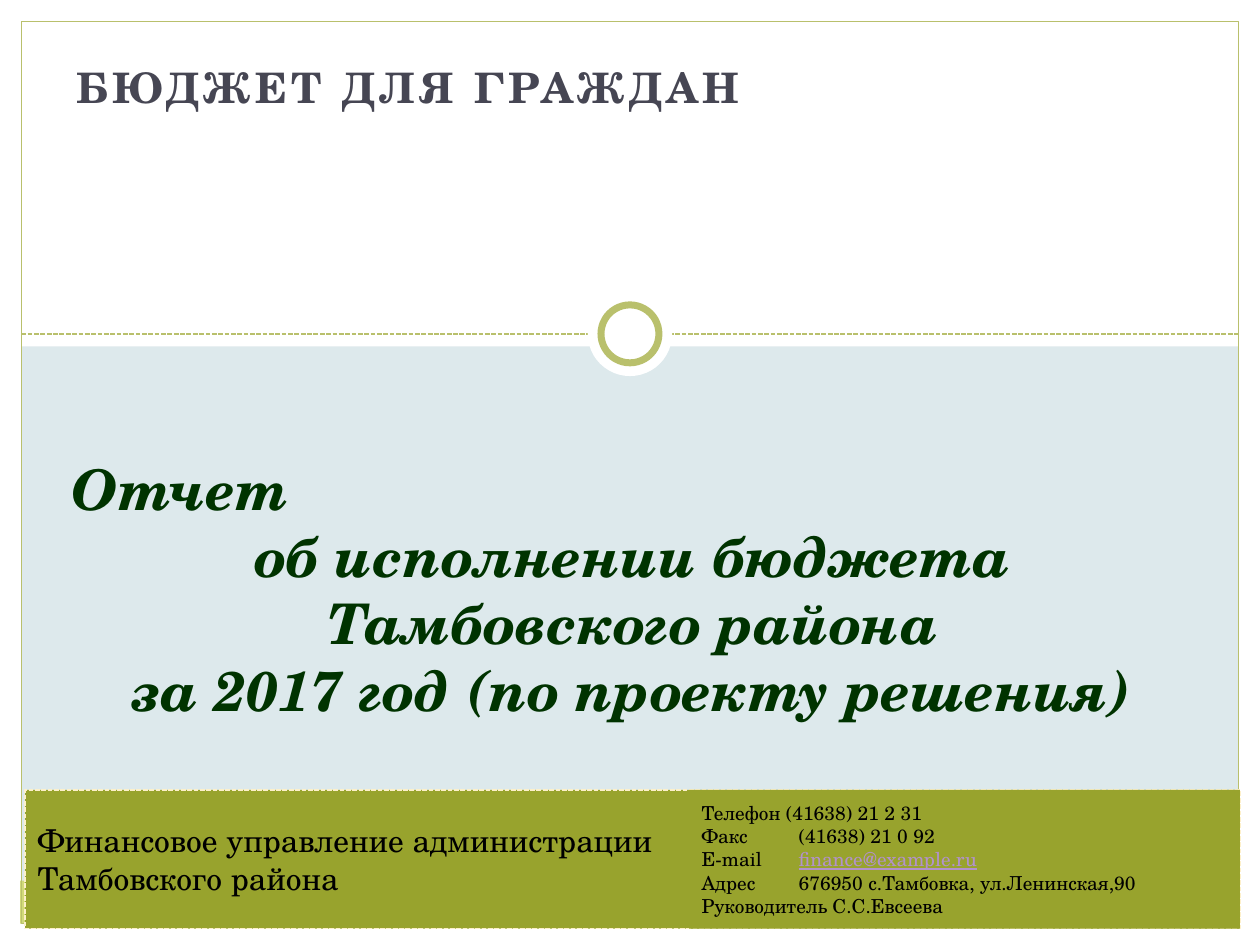
"""Build the title slide of a district budget report for citizens."""
from lxml import etree
from pptx import Presentation
from pptx.dml.color import RGBColor
from pptx.enum.dml import MSO_LINE
from pptx.enum.shapes import MSO_CONNECTOR, MSO_SHAPE
from pptx.enum.text import MSO_ANCHOR, MSO_AUTO_SIZE, PP_ALIGN
from pptx.oxml.ns import qn
from pptx.util import Inches, Pt

RECTANGLE, ELLIPSE = MSO_SHAPE.RECTANGLE, MSO_SHAPE.OVAL
STRAIGHT = MSO_CONNECTOR.STRAIGHT
DASH = MSO_LINE.SQUARE_DOT
LEFT, CENTER = PP_ALIGN.LEFT, PP_ALIGN.CENTER
TOP, MIDDLE, BOTTOM = MSO_ANCHOR.TOP, MSO_ANCHOR.MIDDLE, MSO_ANCHOR.BOTTOM
NO_AUTOFIT = MSO_AUTO_SIZE.NONE

WHITE, BLACK = "FFFFFF", "000000"
PALE_BLUE, LIME, OLIVE = "DDE9EC", "D2DA7A", "98A32D"
FRAME, CREAM = "B9C06C", "FDF0CA"
SLATE, DARK_GREEN, LILAC = "464653", "003300", "B292CA"


def color(value):
    """Turn a hex string into a colour."""
    return RGBColor.from_string(value)


def add_run(paragraph, text, font="TeX Gyre Schola", size=18, fill=BLACK,
            bold=False, italic=False, underline=False, spacing=0):
    """Add one formatted run to a paragraph."""
    run = paragraph.add_run()
    run.text = text
    run.font.name, run.font.size = font, Pt(size)
    run.font.bold, run.font.italic = bold, italic
    run.font.underline = underline
    run.font.color.rgb = color(fill)
    if spacing:
        run.font._element.set("spc", str(int(spacing * 100)))


def add_tab_stop(paragraph, inches):
    """Set a left tab stop on a paragraph."""
    properties = paragraph._p.get_or_add_pPr()
    stops = etree.SubElement(properties, qn("a:tabLst"))
    etree.SubElement(stops, qn("a:tab"), pos=str(Inches(inches)), algn="l")


class SlideBuilder:
    """Draw on one slide with lengths in columns and rows of a grid."""

    def __init__(self, presentation, columns=100, rows=75):
        self.slide = presentation.slides.add_slide(presentation.slide_layouts[0])
        self.column = presentation.slide_width / columns
        self.row = presentation.slide_height / rows

    def box(self, left, top, width, height):
        """Convert grid units to slide lengths."""
        return (round(left * self.column), round(top * self.row),
                round(width * self.column), round(height * self.row))

    def background(self, fill):
        """Fill the slide background."""
        self.slide.background.fill.solid()
        self.slide.background.fill.fore_color.rgb = color(fill)

    def outline(self, line, stroke, width, dash=None):
        """Style a line."""
        line.color.rgb = color(stroke)
        line.width = Pt(width)
        if dash:
            line.dash_style = dash

    def shape(self, place, kind=RECTANGLE, fill=None, stroke=None, width=0.75, dash=None):
        """Add a preset shape."""
        shape = self.slide.shapes.add_shape(kind, *self.box(*place))
        shape.shadow.inherit = False
        if fill:
            shape.fill.solid()
            shape.fill.fore_color.rgb = color(fill)
        else:
            shape.fill.background()
        if stroke:
            self.outline(shape.line, stroke, width, dash)
        else:
            shape.line.fill.background()
        return shape

    def rule(self, left, right, row):
        """Add a dashed horizontal line."""
        start_x, y, length, _ = self.box(left, row, right - left, 0)
        connector = self.slide.shapes.add_connector(STRAIGHT, start_x, y, start_x + length, y)
        self.outline(connector.line, FRAME, 0.9, DASH)
        etree.SubElement(connector._element.spPr, qn("a:effectLst"))

    def text(self, shape, paragraphs, anchor=MIDDLE, before=0, tab=None, **style):
        """Write (alignment, runs) paragraphs; each run is text and its own style."""
        frame = shape.text_frame
        frame.word_wrap, frame.auto_size = True, NO_AUTOFIT
        frame.vertical_anchor = anchor
        for index, (alignment, runs) in enumerate(paragraphs):
            paragraph = frame.add_paragraph() if index else frame.paragraphs[0]
            paragraph.alignment = alignment
            paragraph.space_before = Pt(before)
            if tab:
                add_tab_stop(paragraph, tab)
            for text, own_style in runs:
                add_run(paragraph, text, **{**style, **own_style})

    def placeholder(self, index, place, paragraphs, **style):
        """Move a placeholder in front of the backdrop and fill it."""
        shape = self.slide.placeholders[index]
        shape.left, shape.top, shape.width, shape.height = self.box(*place)
        tree = shape.element.getparent()
        tree.append(shape.element)
        self.text(shape, paragraphs, **style)


def plain(*lines, alignment=LEFT):
    """Make single-run paragraphs."""
    return [(alignment, [(line, {})]) for line in lines]


def main():
    """Build and save the slide."""
    presentation = Presentation()
    presentation.slide_width, presentation.slide_height = Inches(10), Inches(7.5)
    builder = SlideBuilder(presentation)
    margin = 1.7
    inner_width, inner_height = 100 - 2 * margin, 75 - 2 * margin

    builder.background(PALE_BLUE)
    for place in ((0, 75 - margin, 100, margin), (100 - margin, 0, margin, 75),
                  (0, 0, margin, 75), (0, 0, 100, 27.5)):
        builder.shape(place, fill=WHITE)
    builder.shape((1.6, 69.9, inner_width, 3.4), fill=LIME)
    builder.rule(margin, 100 - margin, 26.5)
    builder.shape((margin, margin, inner_width, inner_height), stroke=FRAME)
    for diameter, stroke in ((6.7, None), (4.6, FRAME)):
        place = (50 - diameter / 2, 26.5 - diameter / 2, diameter, diameter)
        builder.shape(place, ELLIPSE, WHITE, stroke, 4)

    builder.placeholder(1, (5.1, 4.4, 70.9, 19.2), plain("БЮДЖЕТ ДЛЯ ГРАЖДАН"),
                        anchor=TOP, before=4.8, size=24, fill=SLATE, bold=True, spacing=2.5)
    title = plain("Отчет") + plain(
        "об исполнении бюджета", "Тамбовского района",
        "за 2017 год (по проекту решения)", alignment=CENTER)
    builder.placeholder(0, (4.7, 23.3, 91, 34.6), title, anchor=BOTTOM,
                        size=32, fill=DARK_GREEN, bold=True, italic=True)

    office = builder.shape((2, 62.7, 96.4, 11), fill=OLIVE, stroke=CREAM, width=0.9, dash=DASH)
    builder.text(office, plain("Финансовое управление администрации", "Тамбовского района"))
    contacts = builder.shape((54.7, 62.7, 43.7, 11), fill=OLIVE)
    email = (LEFT, [("E-mail\t", {}), ("finance@example.ru", {"fill": LILAC, "underline": True})])
    builder.text(contacts, [
        *plain("Телефон (41638) 21 2 31", "Факс\t(41638) 21 0 92"), email,
        *plain("Адрес\t676950 c.Тамбовка, ул.Ленинская,90", "Руководитель С.С.Евсеева"),
    ], size=11, tab=0.77)

    presentation.save("out.pptx")


if __name__ == "__main__":
    main()
